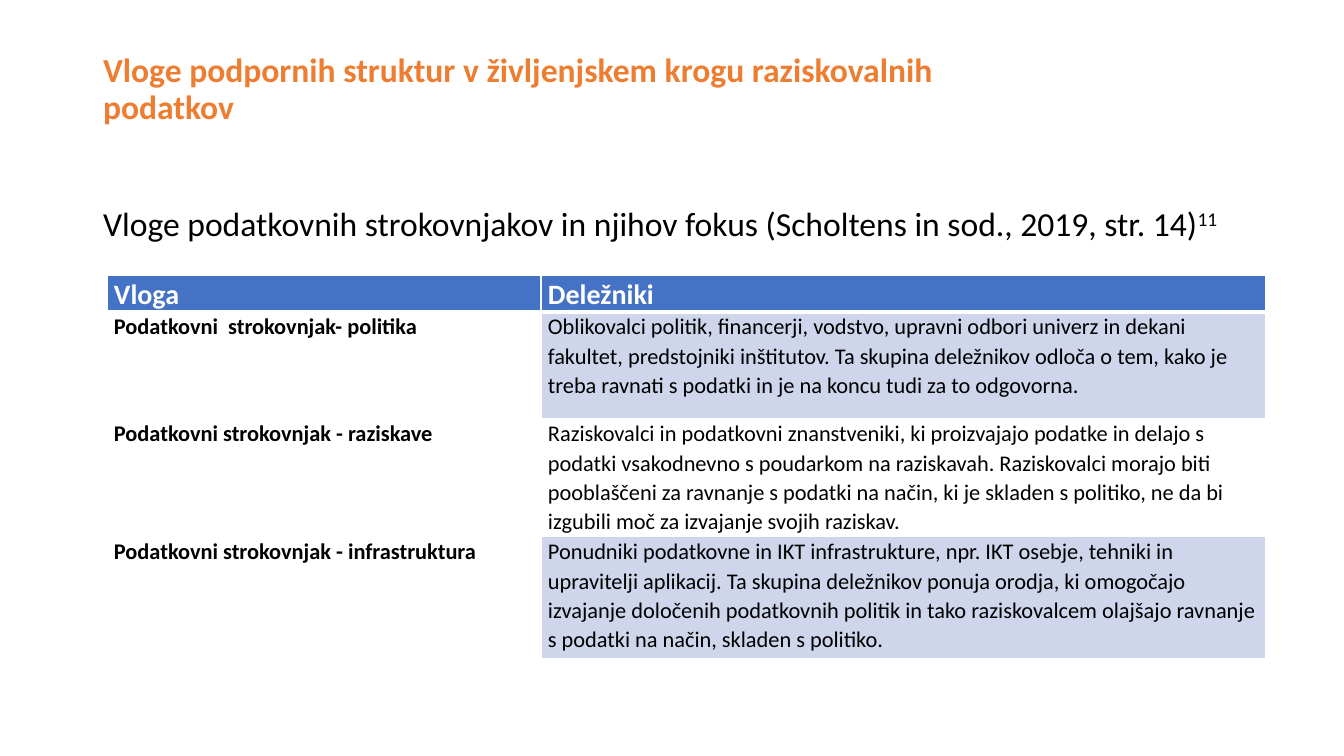
import pptx
import pptx.dml.color
import pptx.enum.text
import pptx.oxml
import pptx.oxml.ns
import pptx.util

COLORS = {
    "accent": "ED7D31",
    "text": "000000",
    "white": "FFFFFF",
    "header": "4472C4",
    "band": "CFD5EA",
}

ROLES = [
    ("Vloga", "Deležniki"),
    (
        "Podatkovni  strokovnjak- politika",
        "Oblikovalci politik, financerji, vodstvo, upravni odbori univerz in dekani fakultet, "
        "predstojniki inštitutov. Ta skupina deležnikov odloča o tem, kako je treba ravnati "
        "s podatki in je na koncu tudi za to odgovorna.",
    ),
    (
        "Podatkovni strokovnjak - raziskave",
        "Raziskovalci in podatkovni znanstveniki, ki proizvajajo podatke in delajo s podatki "
        "vsakodnevno s poudarkom na raziskavah. Raziskovalci morajo biti pooblaščeni za ravnanje "
        "s podatki na način, ki je skladen s politiko, ne da bi izgubili moč za izvajanje svojih "
        "raziskav.",
    ),
    (
        "Podatkovni strokovnjak - infrastruktura",
        "Ponudniki podatkovne in IKT infrastrukture, npr. IKT osebje, tehniki in upravitelji "
        "aplikacij. Ta skupina deležnikov ponuja orodja, ki omogočajo izvajanje določenih "
        "podatkovnih politik in tako raziskovalcem olajšajo ravnanje s podatki na način, skladen "
        "s politiko.",
    ),
]


class RolesSlide:
    font = "Calibri"
    px = 914400 / 100.8

    def __init__(self, deck, width, height):
        deck.slide_width = self.emu(width)
        deck.slide_height = self.emu(height)
        self.slide = deck.slides.add_slide(deck.slide_layouts[1])

    def emu(self, length):
        return pptx.util.Emu(round(length * self.px))

    def color(self, name):
        return pptx.dml.color.RGBColor.from_string(COLORS[name])

    def style(self, paragraph, size, color, bold, spacing):
        paragraph.alignment = pptx.enum.text.PP_ALIGN.LEFT
        paragraph.line_spacing = spacing
        for run in paragraph.runs:
            run.font.name = self.font
            run.font.size = pptx.util.Pt(size)
            run.font.bold = bold
            run.font.color.rgb = self.color(color)

    def place(self, holder, left, top, width, height, anchor):
        holder.left, holder.top = self.emu(left), self.emu(top)
        holder.width, holder.height = self.emu(width), self.emu(height)
        frame = holder.text_frame
        frame.word_wrap = True
        frame.auto_size = pptx.enum.text.MSO_AUTO_SIZE.NONE
        frame.vertical_anchor = anchor
        return frame.paragraphs[0]

    def title(self, text, *box):
        heading = self.place(self.slide.shapes.title, *box, pptx.enum.text.MSO_ANCHOR.MIDDLE)
        heading.text = text
        self.style(heading, 24, "accent", True, 0.9)

    def body(self, text, footnote, *box):
        caption = self.place(self.slide.placeholders[1], *box, pptx.enum.text.MSO_ANCHOR.TOP)
        caption.text = text
        mark = caption.add_run()
        mark.text = footnote
        properties = caption._p.get_or_add_pPr()
        properties.set("marL", "0")
        properties.set("indent", "0")
        properties.append(pptx.oxml.parse_xml(f'<a:buNone {pptx.oxml.ns.nsdecls("a")}/>'))
        caption.space_before = pptx.util.Pt(0)
        self.style(caption, 24, "text", False, 0.9)
        mark.font._element.set("baseline", "30000")

    def borders(self, cell, bottom):
        properties = cell._tc.get_or_add_tcPr()
        for side, points in (("L", 1), ("R", 1), ("T", 1), ("B", bottom)):
            properties.append(pptx.oxml.parse_xml(
                f'<a:ln{side} {pptx.oxml.ns.nsdecls("a")} w="{pptx.util.Pt(points)}">'
                f'<a:solidFill><a:srgbClr val="{COLORS["white"]}"/></a:solidFill></a:ln{side}>'
            ))

    def cell(self, cell, text, size, color, bold, fill):
        cell.margin_left = cell.margin_right = self.emu(7)
        cell.margin_top = cell.margin_bottom = 0
        cell.vertical_anchor = pptx.enum.text.MSO_ANCHOR.TOP
        entry = cell.text_frame.paragraphs[0]
        entry.text = text
        entry.space_after = pptx.util.Pt(8)
        self.style(entry, size, color, bold, 1.07)
        self.borders(cell, 3 if fill == "header" else 1)
        if fill:
            cell.fill.solid()
            cell.fill.fore_color.rgb = self.color(fill)
        else:
            cell.fill.background()

    def table(self, rows, left, top, widths, heights):
        table = self.slide.shapes.add_table(
            len(rows), len(widths), self.emu(left), self.emu(top),
            self.emu(sum(widths)), self.emu(sum(heights)),
        ).table
        table.horz_banding = False
        for column, width in zip(table.columns, widths):
            column.width = self.emu(width)
        for row, height in zip(table.rows, heights):
            row.height = self.emu(height)
        for r, texts in enumerate(rows):
            for c, text in enumerate(texts):
                if r == 0:
                    look = (20, "white", True, "header")
                else:
                    look = (16, "text", c == 0, "band" if c == 1 and r % 2 else None)
                self.cell(table.cell(r, c), text, *look)


def main():
    deck = pptx.Presentation()
    page = RolesSlide(deck, 1344, 756)
    page.title(
        "Vloge podpornih struktur v življenjskem krogu raziskovalnih \vpodatkov",
        93, 56, 1230, 68,
    )
    page.body(
        "Vloge podatkovnih strokovnjakov in njihov fokus (Scholtens in sod., 2019, str. 14)",
        "11", 93, 202, 1230, 526,
    )
    page.table(ROLES, 107, 275, (434, 725), (36, 107, 118, 122))
    deck.save("out.pptx")


if __name__ == "__main__":
    main()
